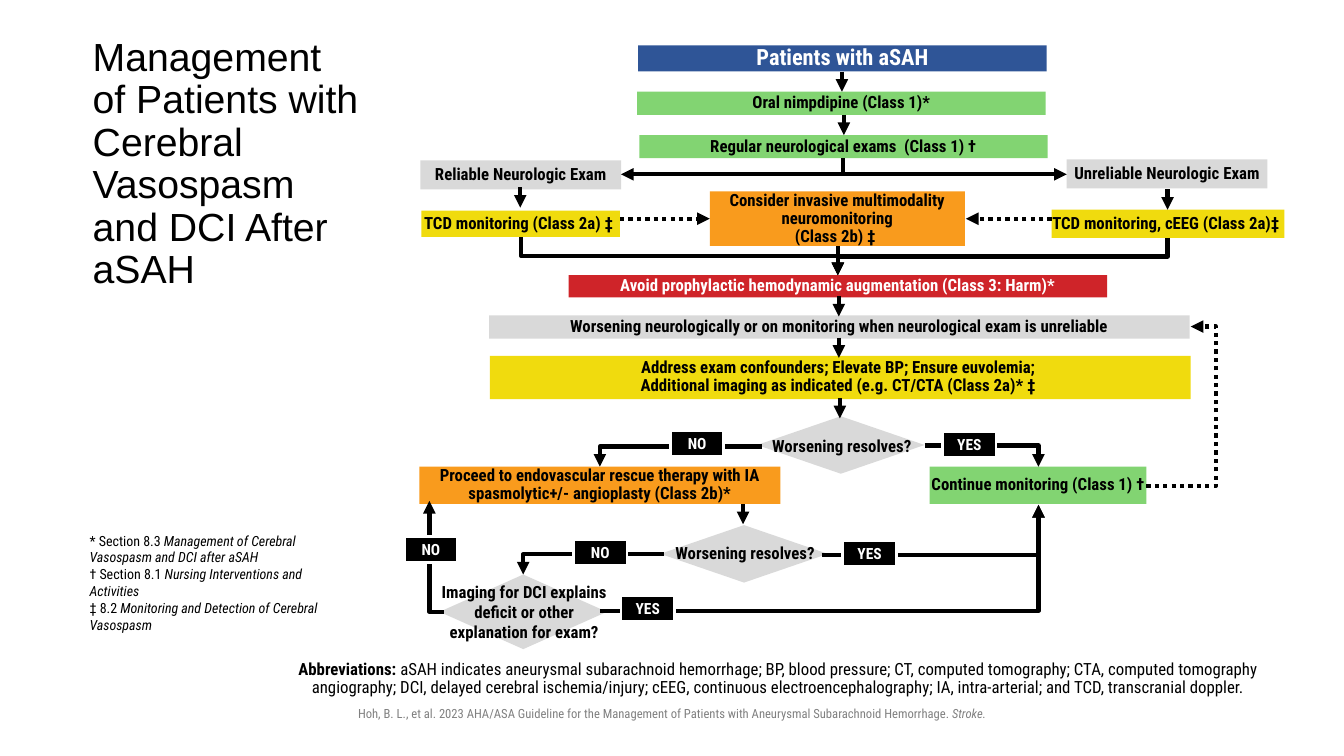
from pptx import Presentation
from pptx.dml.color import RGBColor
from pptx.enum.dml import MSO_LINE
from pptx.enum.shapes import MSO_CONNECTOR, MSO_SHAPE
from pptx.enum.text import MSO_ANCHOR, PP_ALIGN
from pptx.oxml.ns import qn
from pptx.util import Inches, Pt
from lxml import etree

BLACK = RGBColor(0x00, 0x00, 0x00)
WHITE = RGBColor(0xFF, 0xFF, 0xFF)
BLUE = RGBColor(0x2F, 0x55, 0x97)
GREEN = RGBColor(0x82, 0xD4, 0x72)
GREY = RGBColor(0xD9, 0xD9, 0xD9)
YELLOW = RGBColor(0xF0, 0xDB, 0x0E)
ORANGE = RGBColor(0xF9, 0x9B, 0x1D)
RED = RGBColor(0xCF, 0x24, 0x29)
CITATION_GREY = RGBColor(0x80, 0x80, 0x80)

RECT, DIAMOND = MSO_SHAPE.RECTANGLE, MSO_SHAPE.DIAMOND
STRAIGHT, ELBOW = MSO_CONNECTOR.STRAIGHT, MSO_CONNECTOR.ELBOW
DOTTED = MSO_LINE.ROUND_DOT
LEFT, CENTER = PP_ALIGN.LEFT, PP_ALIGN.CENTER
TOP, MIDDLE = MSO_ANCHOR.TOP, MSO_ANCHOR.MIDDLE
BODY_FONT, TITLE_FONT = "Roboto Condensed", "Arial"


def write(tf, text, size=12, color=BLACK, bold=False, font=BODY_FONT, align=CENTER,
          anchor=TOP, spacing=None, insets=(0.1, 0.05, 0.1, 0.05)):
    """Fill a frame: one paragraph per line, with every second part between | in *style*.

    A part after an odd number of | marks is italic.
    """
    tf.word_wrap = True
    tf.vertical_anchor = anchor
    tf.margin_left, tf.margin_top, tf.margin_right, tf.margin_bottom = map(Inches, insets)
    for i, line in enumerate(text.split("\n")):
        p = tf.paragraphs[0] if i == 0 else tf.add_paragraph()
        p.alignment = align
        if spacing:
            p.line_spacing = spacing
        for j, part in enumerate(line.split("|")):
            r = p.add_run()
            r.text = part
            r.font.name, r.font.size = font, Pt(size)
            r.font.bold, r.font.italic = bold, j % 2 == 1
            r.font.color.rgb = color
    return tf


class FlowSlide:
    def __init__(self, s, line_width=3):
        self.s = s
        self.line_width = Pt(line_width)

    def text(self, at, text, shapes=None, **style):
        tb = (shapes or self.s.shapes).add_textbox(*map(Inches, at))
        return write(tb.text_frame, text, **style)

    def shape(self, kind, at, fill, shapes=None):
        sp = (shapes or self.s.shapes).add_shape(kind, *map(Inches, at))
        sp.shadow.inherit = False
        sp.fill.solid()
        sp.fill.fore_color.rgb = fill
        sp.line.fill.background()
        return sp

    def step(self, at, fill, text, color=BLACK, size=12):
        sp = self.shape(RECT, at, fill)
        write(sp.text_frame, text, size, color, True, anchor=MIDDLE, spacing=0.9,
              insets=(0, 0, 0, 0))

    def decision(self, x, y, h, text, text_y, text_h):
        group = self.s.shapes.add_group_shape().shapes
        self.shape(DIAMOND, (x, y, 1.66, h), GREY, group)
        self.text((x - 0.15, text_y, 1.98, text_h), text, group, bold=True)

    def answer(self, x, y, text):
        sp = self.shape(RECT, (x, y, 0.53, 0.26), BLACK)
        sp.line.color.rgb = WHITE
        sp.line.width = Pt(2)
        write(sp.text_frame, text, 11, WHITE, True, anchor=MIDDLE, insets=(0, 0, 0, 0))

    def arrow(self, x1, y1, x2, y2, kind=STRAIGHT, dotted=False):
        c = self.s.shapes.add_connector(kind, *map(Inches, (x1, y1, x2, y2)))
        c.line.color.rgb = BLACK
        c.line.width = self.line_width
        if dotted:
            c.line.dash_style = DOTTED
        spPr = c._element.spPr
        etree.SubElement(spPr.find(qn("a:ln")), qn("a:tailEnd"), type="triangle")
        etree.SubElement(spPr, qn("a:effectLst"))
        return c

    def elbow(self, x1, y1, x2, y2, down_first=False, bend=None, dotted=False):
        """Arrow with one corner, or with two when bend gives the place of the middle part."""
        if down_first:
            cx, cy = (x1 + x2) / 2, (y1 + y2) / 2
            half_w, half_h = (y2 - y1) / 2, abs(x2 - x1) / 2
            rightward = x2 > x1
            if rightward:
                half_w = -half_w
            c = self.arrow(cx - half_w, cy - half_h, cx + half_w, cy + half_h, ELBOW, dotted)
            c._element.spPr.find(qn("a:xfrm")).set("rot", str((270 if rightward else 90) * 60000))
        else:
            c = self.arrow(x1, y1, x2, y2, ELBOW, dotted)
        geom = c._element.spPr.find(qn("a:prstGeom"))
        if bend is None:
            geom.set("prst", "bentConnector2")
        else:
            etree.SubElement(geom.find(qn("a:avLst")), qn("a:gd"), name="adj1",
                             fmla=f"val {round(bend * 100000)}")


def main():
    prs = Presentation()
    prs.slide_width, prs.slide_height = Inches(13.33), Inches(7.5)
    flow = FlowSlide(prs.slides.add_slide(prs.slide_layouts[6]))

    flow.text((2.94, 6.95, 7.45, 0.25),
              "Hoh, B. L., et al. 2023 AHA/ASA Guideline for the Management of Patients with "
              "Aneurysmal Subarachnoid Hemorrhage. |Stroke.", size=9, color=CITATION_GREY)
    flow.text((0.92, 0.4, 2.67, 2.47),
              "Management of Patients with Cerebral Vasospasm and DCI After aSAH",
              size=28, font=TITLE_FONT, align=LEFT, anchor=MIDDLE, spacing=0.9,
              insets=(0, 0, 0, 0))

    flow.step((6.33, 0.45, 4.05, 0.26), BLUE, "Patients with aSAH", WHITE, 16)
    for at, fill, text in (
        ((6.32, 0.91, 4.05, 0.23), GREEN, "Oral nimpdipine (Class 1)*"),
        ((6.34, 1.34, 4.05, 0.23), GREEN, "Regular neurological exams  (Class 1) †"),
        ((4.17, 1.59, 1.99, 0.29), GREY, "Reliable Neurologic Exam"),
        ((10.58, 1.58, 1.99, 0.29), GREY, "Unreliable Neurologic Exam"),
        ((4.18, 2.09, 1.97, 0.26), YELLOW, "TCD monitoring (Class 2a) ‡ "),
        ((10.43, 2.08, 2.31, 0.28), YELLOW, "TCD monitoring, cEEG (Class 2a)‡ "),
        ((7.04, 1.9, 2.53, 0.54), ORANGE,
         "Consider invasive multimodality\nneuromonitoring\n(Class 2b) ‡ "),
        ((4.85, 3.13, 6.95, 0.23), GREY,
         "Worsening neurologically or on monitoring when neurological exam is unreliable"),
        ((4.86, 3.53, 6.95, 0.43), YELLOW,
         "Address exam confounders; Elevate BP; Ensure euvolemia; \n"
         "Additional imaging as indicated (e.g. CT/CTA (Class 2a)* ‡ "),
        ((4.16, 4.63, 3.58, 0.37), ORANGE,
         "Proceed to endovascular rescue therapy with IA spasmolytic+/- angioplasty (Class 2b)*"),
        ((9.22, 4.63, 2.15, 0.37), GREEN, "Continue monitoring (Class 1) †"),
    ):
        flow.step(at, fill, text)
    flow.step((5.64, 2.73, 5.34, 0.22), RED,
              "Avoid prophylactic hemodynamic augmentation (Class 3: Harm)*", WHITE)

    flow.decision(7.51, 4.13, 0.57, "Worsening resolves?", 4.27, 0.3)
    flow.decision(6.55, 5.21, 0.57, "Worsening resolves?", 5.34, 0.3)
    flow.decision(4.36, 5.7, 0.74,
                  "Imaging for DCI explains deficit or other explanation for exam?", 5.72, 0.71)

    for x, y in ((8.35, 0.71), (8.37, 1.14), (5.16, 1.86), (11.58, 1.88), (8.32, 2.94),
                 (8.32, 3.35), (8.33, 3.95), (7.37, 5)):
        flow.arrow(x, y, x, y + 0.2)
    flow.arrow(8.31, 2.44, 8.31, 2.73)
    flow.arrow(10.43, 2.17, 9.58, 2.17, dotted=True)
    flow.arrow(6.15, 2.17, 7.04, 2.17, dotted=True)

    for exam_edge in (6.16, 10.58):
        flow.elbow(8.36, 1.57, exam_edge, 1.73, down_first=True)
    flow.elbow(5.17, 2.35, 8.31, 2.73, down_first=True, bend=0.5)
    flow.elbow(11.58, 2.36, 8.31, 2.73, down_first=True, bend=0.5)
    for ends in ((7.56, 4.43, 5.95, 4.63), (9.17, 4.42, 10.3, 4.63), (6.59, 5.5, 5.19, 5.7),
                 (4.4, 6.07, 4.26, 4.97), (8.15, 5.51, 10.3, 5.01), (5.95, 6.06, 10.3, 5.01)):
        flow.elbow(*ends)
    flow.elbow(11.37, 4.82, 11.81, 3.24, bend=1.57, dotted=True)

    for x, y in ((6.65, 4.27), (5.69, 5.35), (4.01, 5.32)):
        flow.answer(x, y, "NO")
    for x, y in ((9.35, 4.28), (8.36, 5.36), (6.16, 5.91)):
        flow.answer(x, y, "YES")

    flow.text((0.79, 5.23, 2.52, 1.11),
              "* Section 8.3 |Management of Cerebral Vasospasm and DCI after aSAH\n"
              "† Section 8.1 |Nursing Interventions and Activities\n"
              "‡ 8.2 |Monitoring and Detection of Cerebral Vasospasm", size=10, align=LEFT)
    tf = flow.text((2.8, 6.51, 9.94, 0.47),
                   "Abbreviations: ||aSAH indicates aneurysmal subarachnoid hemorrhage; BP, blood "
                   "pressure; CT, computed tomography; CTA, computed tomography angiography; DCI, "
                   "delayed cerebral ischemia/injury; cEEG, continuous electroencephalography; IA, "
                   "intra-arterial; and TCD, transcranial doppler.",
                   spacing=0.9, insets=(0, 0.05, 0.1, 0.05))
    tf.paragraphs[0].runs[0].font.bold = True
    prs.save("out.pptx")


if __name__ == "__main__":
    main()
